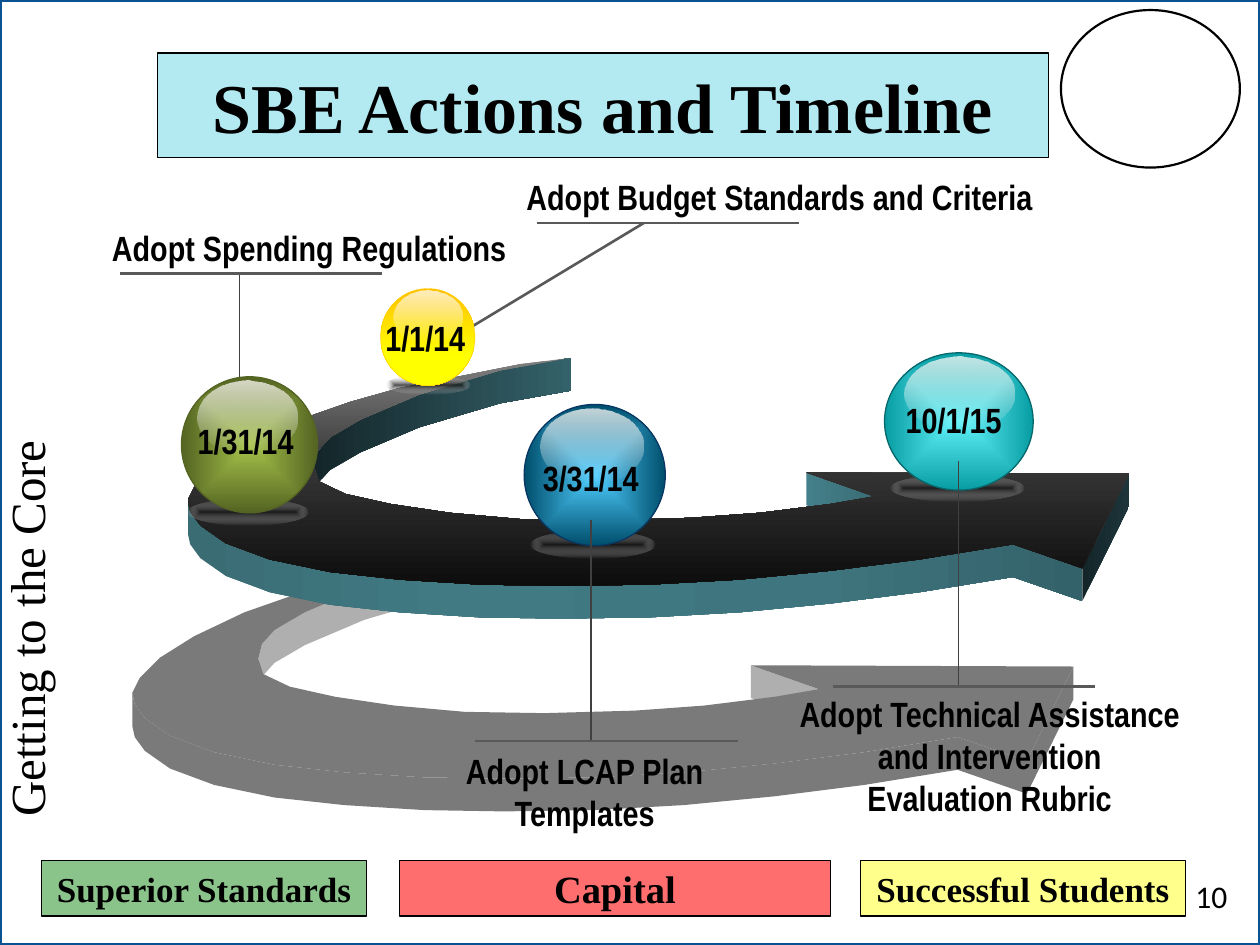
import pptx
import pptx.util
import pptx.oxml
import pptx.oxml.ns
import pptx.dml.color
import pptx.enum.shapes
import pptx.enum.text
from pptx.util import Inches

COLORS = {
    "frame": "0B5292", "black": "000000", "white": "FFFFFF", "banner": "B3EAF2",
    "rule": "595959", "stem": "404040", "green": "8AC48A", "red": "FF6E6E",
    "yellow": "FFFF8C", "shade": "7A7A7A", "shade_light": "AFAFAF",
}
SERIF, NARROW = "Times New Roman", "Arial Narrow"

# Footer boxes: text, left, width, colour, size
pillars = [
    ("Superior Standards", 0.33, 2.58, "green", 20),
    ("Capital", 3.17, 3.42, "red", 22),
    ("Successful Students", 6.83, 2.58, "yellow", 20),
]

# Each action: lines and box, rule (left, right, y), stem (from, to), date and box,
# ball box, ball gradient, ball edge (colour, width), gloss box, contact shadow box
actions = [
    {"lines": ["Adopt Budget Standards and Criteria"], "box": (4.08, 1.34, 4.25, 0.44),
     "rule": (4.26, 6.34, 1.77), "stem": (5.11, 1.77, 3.4, 2.8),
     "date": "1/1/14", "date_box": (2.96, 2.46, 0.84, 0.44), "ball": (3.02, 2.29, 0.75, 0.77),
     "tones": [(0, "FFC000"), (70, "FFFF00"), (100, "FFFF00")], "radial": False,
     "edge": ("FFCC00", 0.25), "gloss": (3.12, 2.31, 0.55, 0.42), "contact": (3.06, 2.98, 0.67, 0.15)},
    {"lines": ["Adopt Technical Assistance", "and Intervention", "Evaluation Rubric"],
     "box": (6.16, 5.45, 3.39, 1.11), "rule": (6.61, 8.69, 5.45), "stem": (7.61, 3.66, 7.61, 5.45),
     "date": "10/1/15", "date_box": (7.09, 3.11, 0.97, 0.44), "ball": (7.02, 2.8, 1.18, 1.09),
     "tones": [(0, "5EF0F7"), (100, "089CA3")], "radial": True,
     "edge": ("06686C", 0.75), "gloss": (7.18, 2.83, 0.87, 0.59), "contact": (7.07, 3.77, 1.06, 0.21)},
    {"lines": ["Adopt LCAP Plan", "Templates"], "box": (3.57, 5.9, 2.14, 0.77),
     "rule": (3.77, 5.86, 5.88), "stem": (4.69, 4.13, 4.69, 5.88),
     "date": "3/31/14", "date_box": (4.21, 3.57, 0.97, 0.44), "ball": (4.16, 3.21, 1.12, 1.12),
     "tones": [(0, "4FCEFF"), (100, "004E6C")], "radial": True,
     "edge": ("083763", 0.75), "gloss": (4.29, 3.24, 0.82, 0.6), "contact": (4.21, 4.21, 0.99, 0.22)},
    {"lines": ["Adopt Spending Regulations"], "box": (0.79, 1.75, 3.55, 0.44),
     "rule": (0.95, 3.03, 2.17), "stem": (1.9, 2.17, 1.9, 3.62),
     "date": "1/31/14", "date_box": (1.47, 3.28, 0.97, 0.44), "ball": (1.44, 2.99, 1.08, 1.08),
     "tones": [(0, "A5C249"), (100, "546422")], "radial": True,
     "edge": ("546422", 0.75), "gloss": (1.57, 3.02, 0.79, 0.59), "contact": (1.49, 3.96, 0.96, 0.21)},
]

# Edges of the curved arrow's top face, in inches
tail_outer = [(4.53, 2.84), (4.13, 2.89), (3.73, 2.97), (3.17, 3.08), (2.78, 3.19),
              (2.38, 3.33), (1.98, 3.52), (1.71, 3.69), (1.55, 3.85), (1.49, 3.97)]
front = [(1.49, 3.97), (1.51, 4.06), (1.59, 4.17), (1.79, 4.31), (2.14, 4.44), (2.62, 4.54),
         (3.17, 4.6), (3.81, 4.64), (4.44, 4.65), (5.16, 4.64), (5.87, 4.6), (6.59, 4.53),
         (7.3, 4.44), (8.04, 4.32), (8.59, 4.51)]
tip, barb, notch = (8.96, 3.76), (6.4, 3.75), (6.94, 3.94)
hole_front = [(6.59, 4), (6.03, 4.07), (5.48, 4.11), (4.76, 4.13), (4.13, 4.12),
              (3.57, 4.07), (3.1, 4), (2.74, 3.92), (2.53, 3.82)]
tail_inner = [(2.49, 3.7), (2.52, 3.58), (2.62, 3.47), (2.86, 3.33), (3.33, 3.13),
              (3.97, 2.94), (4.53, 2.84)]
DEPTH = 0.26
SHADOW_SHIFT = (-0.44, 1.53)


def moved(points, dx, dy):
    return [(x + dx, y + dy) for x, y in points]


def wall(edge):
    return edge + moved(edge, 0, DEPTH)[::-1]


# Faces: outline, gradient tones, gradient angle, shadow colour
arrow_faces = [
    (wall(tail_inner), [(0, "14262A"), (100, "34626A")], 0, "shade_light"),
    (wall([barb, notch]), [(0, "44808A"), (100, "3A6C74")], 0, "shade_light"),
    (wall(front), [(0, "3A6C74"), (30, "417A83"), (70, "3F757E"), (100, "34626A")], 0, "shade"),
    (wall([front[-1], tip]), [(0, "14262A"), (100, "1C343A")], 0, "shade"),
    (tail_outer + front + [tip, barb, notch] + hole_front + tail_inner,
     [(0, "808080"), (50, "333333"), (100, "0D0D0D")], 90, "shade"),
]

deck = pptx.Presentation()
deck.slide_width, deck.slide_height = Inches(10), Inches(7.5)
slide = deck.slides.add_slide(deck.slide_layouts[5])
shapes = slide.shapes


def rgb(name):
    return pptx.dml.color.RGBColor.from_string(COLORS.get(name, name))


def paint(shape, fill=None, line=None, width=0.75):
    if fill:
        shape.fill.solid()
        shape.fill.fore_color.rgb = rgb(fill)
    else:
        shape.fill.background()
    if line:
        shape.line.color.rgb = rgb(line)
        shape.line.width = pptx.util.Pt(width)
    else:
        shape.line.fill.background()


def add_gradient(shape, tones, angle=None):
    """Tones are (position, colour[, opacity]); no angle means from the centre out."""
    stops = "".join(
        f'<a:gs pos="{tone[0] * 1000}"><a:srgbClr val="{tone[1]}">'
        f'<a:alpha val="{(tone[2] if len(tone) > 2 else 100) * 1000}"/></a:srgbClr></a:gs>'
        for tone in tones)
    direction = (
        '<a:path path="shape"><a:fillToRect l="50000" t="50000" r="50000" b="50000"/></a:path>'
        if angle is None else f'<a:lin ang="{angle * 60000}" scaled="0"/>')
    gradient = pptx.oxml.parse_xml(
        f'<a:gradFill {pptx.oxml.ns.nsdecls("a")} rotWithShape="1"><a:gsLst>{stops}</a:gsLst>'
        f'{direction}</a:gradFill>')
    shape.fill.solid()
    properties = shape._element.spPr
    properties.replace(properties.find(pptx.oxml.ns.qn("a:solidFill")), gradient)


def add_preset(kind, box, fill=None, line=None, width=0.75):
    shape = shapes.add_shape(kind, *map(Inches, box))
    shape.shadow.inherit = False
    paint(shape, fill, line, width)
    return shape


def add_face(points, fill=None):
    builder = shapes.build_freeform(Inches(points[0][0]), Inches(points[0][1]), scale=1)
    builder.add_line_segments([(Inches(x), Inches(y)) for x, y in points[1:]], close=True)
    face = builder.convert_to_shape()
    face.shadow.inherit = False
    paint(face, fill)
    return face


def add_line(x1, y1, x2, y2, color, width):
    line = shapes.add_connector(pptx.enum.shapes.MSO_CONNECTOR.STRAIGHT,
                                *map(Inches, (x1, y1, x2, y2)))
    line.line.color.rgb = rgb(color)
    line.line.width = pptx.util.Pt(width)
    line._element.spPr.append(pptx.oxml.parse_xml(f'<a:effectLst {pptx.oxml.ns.nsdecls("a")}/>'))


def write(shape, text, size, font, bold=True, align="LEFT", anchor="TOP", wrap=True):
    frame = shape.text_frame
    frame.text = text
    frame.word_wrap = wrap
    frame.vertical_anchor = getattr(pptx.enum.text.MSO_ANCHOR, anchor)
    for paragraph in frame.paragraphs:
        paragraph.alignment = getattr(pptx.enum.text.PP_ALIGN, align)
        for run in paragraph.runs:
            run.font.size, run.font.name, run.font.bold = pptx.util.Pt(size), font, bold
            run.font.color.rgb = rgb("black")


def add_text(box, *args, **options):
    label = shapes.add_textbox(*map(Inches, box))
    write(label, *args, **options)
    return label


RECT = pptx.enum.shapes.MSO_SHAPE.RECTANGLE
OVAL = pptx.enum.shapes.MSO_SHAPE.OVAL

# Frame, motto, emblem and footer
add_preset(RECT, (0, 0, 10, 7.5), line="frame", width=2)
add_text((-1.27, 4.35, 3.42, 1.04), "Getting to the Core", 28, SERIF, bold=False).rotation = 270
add_preset(OVAL, (8.42, 0.08, 1.42, 1.25), "white", "black", 1.25)
for text, left, width, color, size in pillars:
    pillar = add_preset(RECT, (left, 6.83, width, 0.44), color, "black")
    write(pillar, text, size, SERIF, align="CENTER", anchor="MIDDLE")

# Title
title = shapes.title
title.left, title.top, title.width, title.height = map(Inches, (1.25, 0.42, 7.07, 0.83))
paint(title, "banner", "black")
write(title, "SBE Actions and Timeline", 40, SERIF, align="CENTER", anchor="MIDDLE")

# Cast shadow, then the curved arrow
for outline, tones, angle, shade in arrow_faces:
    add_face(moved(outline, *SHADOW_SHIFT), shade)
for outline, tones, angle, shade in arrow_faces:
    add_gradient(add_face(outline), tones, angle)

# Balls, with stems from above behind them and stems from below in front
for action in actions:
    left, right, y = action["rule"]
    from_above = y < action["ball"][1]
    if from_above:
        add_line(*action["stem"], "rule" if left > 4 else "stem", 1.5 if left > 4 else 0.75)
    add_gradient(add_preset(OVAL, action["contact"]), [(0, "171717", 76), (100, "FFFFFF", 0)])
    ball = add_preset(OVAL, action["ball"], None, *action["edge"])
    add_gradient(ball, action["tones"], None if action["radial"] else 90)
    add_gradient(add_preset(OVAL, action["gloss"]), [(0, "FFFCF9", 77), (100, "FFFFFF", 0)], 90)
    if not from_above:
        add_line(*action["stem"], "stem", 0.75)
    add_line(left, y, right, y, "rule", 1.5)
    add_text(action["box"], "\n".join(action["lines"]), 20, NARROW, wrap=False,
             align="CENTER" if len(action["lines"]) > 1 else "LEFT")
    add_text(action["date_box"], action["date"], 20, NARROW, wrap=False)

# Page number
add_text((7.78, 6.91, 2.06, 0.37), "10", 18, "Calibri", bold=False, align="RIGHT")

deck.save("out.pptx")
